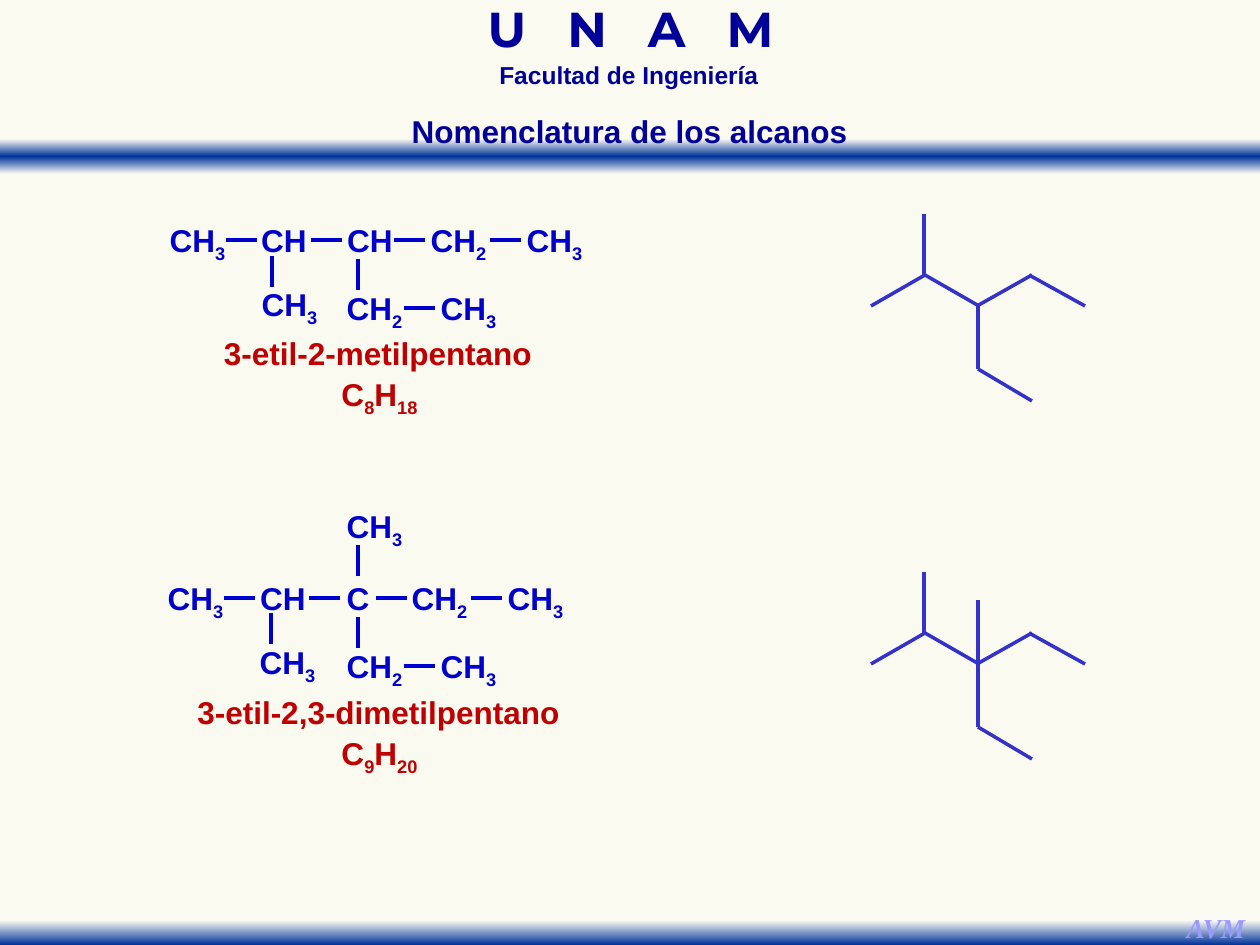
from dataclasses import dataclass
from itertools import groupby

from lxml import etree
from pptx import Presentation
from pptx import util as u
from pptx.dml.color import RGBColor
from pptx.enum import shapes, text
from pptx.oxml.ns import qn

EMU_PER_PX = 914400 / 126
COLORS = {
    "paper": "FAFAF0", "fade": "FAFAF2", "band": "003399", "heading": "000099",
    "signature": "9999FF", "name": "C00000", "formula": "0000CC", "skeleton": "3333CC",
}
ATOM_WIDTHS = {"C": 48, "CH": 72, "CH2": 83, "CH3": 83}
LINE_HEIGHT = 50
BOND = 31


@dataclass(frozen=True)
class Style:
    color: str
    size: float = 18
    font: str = "Arial"
    italic: bool = False
    spacing: float = 1.0


@dataclass(frozen=True)
class Atom:
    formula: str
    left: int
    dy: int = 0


@dataclass(frozen=True)
class Line:
    """A segment whose heights are measured from the top of its molecule."""
    x1: int
    y1: int
    x2: int
    y2: int


@dataclass(frozen=True)
class Molecule:
    name: str
    formula: str
    top: int
    name_dy: int
    name_width: int
    atoms: list[Atom]
    bonds: list[Line]
    skeleton: list[Line]


def px(length: int) -> int:
    return u.Emu(round(length * EMU_PER_PX))


def rgb(key: str) -> RGBColor:
    return RGBColor.from_string(COLORS[key])


def across(x: int, dy: int = 25) -> Line:
    return Line(x, dy, x + BOND, dy)


def down(x: int, dy: int) -> Line:
    return Line(x, dy, x, dy + BOND)


def add_run(paragraph, words: str, style: Style):
    run = paragraph.add_run()
    run.text = words
    font = run.font
    font.name, font.size = style.font, u.Pt(style.size)
    font.bold, font.italic = True, style.italic
    font.color.rgb = rgb(style.color)
    return run


def add_line_box(parent, left: int, top: int, width: int, height: int,
                 style: Style, wrap: bool = False):
    """Add an empty one-line text box and return its paragraph."""
    box = parent.add_textbox(px(left), px(top), px(width), px(height))
    frame = box.text_frame
    frame.word_wrap = wrap
    frame.auto_size = text.MSO_AUTO_SIZE.SHAPE_TO_FIT_TEXT
    paragraph = frame.paragraphs[0]
    paragraph.alignment = text.PP_ALIGN.CENTER
    paragraph.line_spacing = style.spacing
    return paragraph


def add_formula(parent, formula: str, left: int, top: int, width: int, style: Style) -> None:
    """Write a chemical formula with its digits as subscripts."""
    paragraph = add_line_box(parent, left, top, width, LINE_HEIGHT, style)
    for is_count, part in groupby(formula, str.isdigit):
        run = add_run(paragraph, "".join(part), style)
        if is_count:
            run.font._element.set("baseline", "-25000")


def add_lines(parent, lines: list[Line], top: int, color: str) -> None:
    for line in lines:
        stroke = parent.add_connector(
            shapes.MSO_CONNECTOR.STRAIGHT,
            px(line.x1), px(top + line.y1), px(line.x2), px(top + line.y2))
        stroke.line.color.rgb = rgb(color)
        stroke.line.width = u.Pt(2)
        etree.SubElement(stroke._element.spPr, qn("a:effectLst"))


def add_band(slide, top: int, height: int, stops: list[tuple[int, str]]) -> None:
    band = slide.shapes.add_shape(
        shapes.MSO_SHAPE.RECTANGLE, 0, px(top), px(1260), px(height))
    band.shadow.inherit = False
    band.line.fill.background()
    band.fill.gradient()
    band.fill.gradient_angle = 270
    stop_list = band._element.spPr.find(".//" + qn("a:gsLst"))
    for old_stop in list(stop_list):
        stop_list.remove(old_stop)
    for percent, color in stops:
        stop = etree.SubElement(stop_list, qn("a:gs"), pos=str(percent * 1000))
        etree.SubElement(stop, qn("a:srgbClr"), val=COLORS[color])


def add_masthead(slide) -> None:
    style = Style("heading", 28, "Montserrat", spacing=0.7)
    paragraph = add_line_box(slide.shapes, 384, 8, 493, 54, style, wrap=True)
    for character in "U N A M":
        run = add_run(paragraph, character, style)
        if character == " ":
            run.font._element.set("spc", "1560")


def add_molecule(slide, molecule: Molecule) -> None:
    name_style, atom_style = Style("name"), Style("formula")
    center, name_top = 378, molecule.top + molecule.name_dy
    name = add_line_box(slide.shapes, center - molecule.name_width // 2, name_top,
                        molecule.name_width, LINE_HEIGHT, name_style, wrap=True)
    add_run(name, molecule.name, name_style)
    add_formula(slide.shapes, molecule.formula, 326, name_top + 41, 107, name_style)

    structure = slide.shapes.add_group_shape().shapes
    for atom in molecule.atoms:
        add_formula(structure, atom.formula, atom.left, molecule.top + atom.dy,
                    ATOM_WIDTHS[atom.formula], atom_style)
    add_lines(structure, molecule.bonds, molecule.top, "formula")
    add_lines(slide.shapes.add_group_shape().shapes, molecule.skeleton,
              molecule.top, "skeleton")


ETHYL_ATOMS = [Atom("CH2", 333, 68), Atom("CH3", 427, 68)]
ETHYL_BONDS = [down(358, 44), across(404, 93)]
SKELETON = [
    Line(871, 91, 925, 60), Line(979, 91, 925, 60), Line(977, 91, 1032, 60),
    Line(1085, 91, 1029, 60), Line(978, 154, 978, 91), Line(1032, 186, 978, 154),
    Line(924, 62, 924, -1),
]
MOLECULES = [
    Molecule(
        "3-etil-2-metilpentano", "C8H18", 215, 113, 350,
        [Atom("CH3", 156), Atom("CH", 248), Atom("CH", 334), Atom("CH2", 417),
         Atom("CH3", 513), Atom("CH3", 248, 64), *ETHYL_ATOMS],
        [*map(across, (226, 311, 394, 490)), down(272, 41), *ETHYL_BONDS],
        SKELETON),
    Molecule(
        "3-etil-2,3-dimetilpentano", "C9H20", 573, 114, 455,
        [Atom("CH3", 154), Atom("CH", 247), Atom("C", 334), Atom("CH2", 398),
         Atom("CH3", 494), Atom("CH3", 246, 64), *ETHYL_ATOMS, Atom("CH3", 333, -72)],
        [*map(across, (224, 309, 376, 471)), down(271, 40), *ETHYL_BONDS, down(358, -28)],
        [*SKELETON, Line(978, 90, 978, 27)]),
]


def main() -> None:
    deck = Presentation()
    deck.slide_width, deck.slide_height = px(1260), px(945)
    slide = deck.slides.add_slide(deck.slide_layouts[6])
    slide.background.fill.solid()
    slide.background.fill.fore_color.rgb = rgb("paper")

    add_band(slide, 139, 35, [(0, "fade"), (50, "band"), (100, "fade")])
    add_masthead(slide)
    faculty = Style("heading", 14, spacing=0.7)
    add_run(add_line_box(slide.shapes, 404, 62, 450, 34, faculty, wrap=True),
            "Facultad de Ingeniería", faculty)
    add_band(slide, 911, 34, [(28, "fade"), (100, "band")])
    signature = Style("signature", 15.6, "Times New Roman", italic=True)
    add_run(add_line_box(slide.shapes, 1173, 905, 86, 47, signature), "AVM", signature)

    for molecule in MOLECULES:
        add_molecule(slide, molecule)

    title = Style("heading")
    add_run(add_line_box(slide.shapes, 388, 106, 483, LINE_HEIGHT, title),
            "Nomenclatura de los alcanos", title)
    deck.save("out.pptx")


if __name__ == "__main__":
    main()
